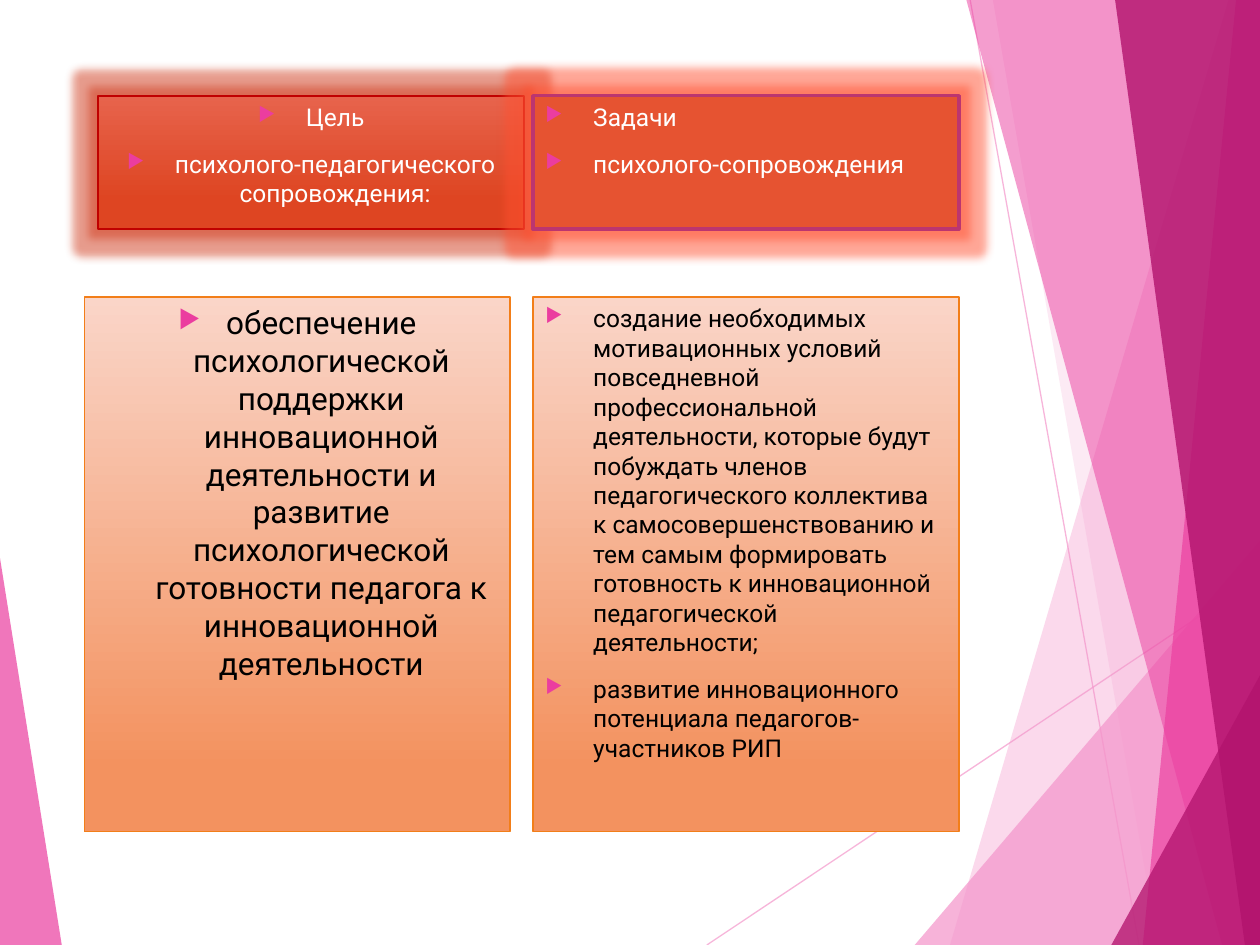
from dataclasses import dataclass

from lxml import etree
from pptx import Presentation
from pptx.dml.color import RGBColor
from pptx.enum.shapes import MSO_CONNECTOR, MSO_SHAPE
from pptx.enum.text import MSO_ANCHOR, PP_ALIGN
from pptx.oxml.ns import qn
from pptx.util import Inches, Pt

LINE = MSO_CONNECTOR.STRAIGHT
RECT = MSO_SHAPE.RECTANGLE
TOP = MSO_ANCHOR.TOP
LEFT, MID = PP_ALIGN.LEFT, PP_ALIGN.CENTER


@dataclass(frozen=True)
class Theme:
    font: str = "Roboto"
    small: int = 14
    large: int = 18
    pale: str = "F496CB"
    pink: str = "EB3D9F"
    plum: str = "B2136D"
    white: str = "FFFFFF"
    black: str = "000000"
    edge: str = "F27E19"
    peach: tuple = ((0, "FAD5C8"), (0.88, "F3925F"))
    red: tuple = ((0, "E7634C"), (0.78, "DE4522"))
    flat: str = "E65331"
    wine: str = "C00000"
    rose: str = "BC356F"
    halo: str = "D03A1C"
    glow: str = "FF5030"


def add(node, tag, **attrs):
    return etree.SubElement(node, qn(tag), attrs)


class Deck:
    cols, rows = 100, 75

    def __init__(self, theme):
        self.theme = theme
        self.prs = Presentation()
        self.prs.slide_width = Inches(10)
        self.prs.slide_height = Inches(7.5)
        self.slide = self.prs.slides.add_slide(self.prs.slide_layouts[6])
        self.shapes = self.slide.shapes

    def x(self, col):
        return round(self.prs.slide_width * col / self.cols)

    def y(self, row):
        return round(self.prs.slide_height * row / self.rows)

    def paint(self, fill, color, alpha=100):
        fill.solid()
        fill.fore_color.rgb = RGBColor.from_string(color)
        if alpha < 100:
            tint = fill._xPr.find(".//" + qn("a:srgbClr"))
            add(tint, "a:alpha", val=str(alpha * 1000))

    def fade(self, fill, stops):
        fill.gradient()
        fill.gradient_angle = 270
        for stop, (pos, color) in zip(fill.gradient_stops, stops):
            stop.position = pos
            stop.color.rgb = RGBColor.from_string(color)

    def line(self, start, end):
        wire = self.shapes.add_connector(
            LINE, self.x(start[0]), self.y(start[1]), self.x(end[0]), self.y(end[1]))
        wire.line.width = Pt(0.75)
        self.paint(wire.line.fill, self.theme.pale, 70)
        add(wire._element.spPr, "a:effectLst")

    def shard(self, color, alpha, *spots):
        first, *rest = [(self.x(col), self.y(row)) for col, row in spots]
        pen = self.shapes.build_freeform(*first)
        pen.add_line_segments(rest, close=True)
        shape = pen.convert_to_shape()
        shape.shadow.inherit = False
        self.paint(shape.fill, color, alpha)
        shape.line.fill.background()

    def box(self, area, fill, edge, width, glow=None):
        col, row, wide, high = area
        shape = self.shapes.add_shape(
            RECT, self.x(col), self.y(row), self.x(wide), self.y(high))
        shape.shadow.inherit = False
        if isinstance(fill, str):
            self.paint(shape.fill, fill)
        else:
            self.fade(shape.fill, fill)
        self.paint(shape.line.fill, edge)
        shape.line.width = Pt(width)
        if glow:
            halo = add(shape._element.spPr.find(qn("a:effectLst")),
                       "a:glow", rad=str(Inches(0.14)))
            tint = add(halo, "a:srgbClr", val=glow)
            add(tint, "a:alpha", val="50000")
        return shape

    def text(self, shape, items, size, color, align):
        frame = shape.text_frame
        frame.word_wrap = True
        frame.vertical_anchor = TOP
        for num, item in enumerate(items):
            para = frame.add_paragraph() if num else frame.paragraphs[0]
            para.alignment = align
            if num:
                para.space_before = Pt(10)
            self.bullet(para)
            run = para.add_run()
            run.text = item
            run.font.name = self.theme.font
            run.font.size = Pt(size)
            run.font.color.rgb = RGBColor.from_string(color)

    def bullet(self, para):
        props = para._p.get_or_add_pPr()
        props.set("marL", str(Inches(0.38)))
        props.set("indent", str(Inches(-0.38)))
        add(add(props, "a:buClr"), "a:srgbClr", val=self.theme.pink)
        add(props, "a:buSzPct", val="80000")
        add(props, "a:buChar", char="▶")

    def save(self):
        self.prs.save("out.pptx")


def main():
    look = Theme()
    deck = Deck(look)
    right, base = deck.cols, deck.rows

    deck.line((56.1, base), (right, 45.7))
    deck.line((77, 0), (90.4, base))
    for color, alpha, *spots in (
        (look.pale, 36, (97.5, 0), (75.4, base), (right, base), (right, 0)),
        (look.pale, 20, (78.8, 0), (91.9, base), (right, base), (right, 0)),
        (look.pale, 72, (72.6, base), (right, 42.9), (right, base)),
        (look.pink, 50, (76.7, 0), (97, base), (right, base), (right, 0)),
        (look.pink, 66, (98.1, 0), (90.7, base), (right, base), (right, 0)),
        (look.plum, 80, (88.5, 0), (98.8, base), (right, base), (right, 0)),
        (look.plum, 76, (88.2, base), (right, 53.6), (right, base)),
        (look.pink, 70, (0, 44.3), (4.9, base), (0, base)),
    ):
        deck.shard(color, alpha, *spots)

    wide, second = 33.8, 42.3
    head, body = (7.6, 10.6), (23.6, 42.4)

    goal = deck.box((6.7, body[0], wide, body[1]), look.peach, look.edge, 1)
    deck.text(goal, [
        "обеспечение психологической поддержки инновационной деятельности и "
        "развитие психологической готовности педагога к инновационной деятельности",
    ], look.large, look.black, MID)

    tasks = deck.box((second, body[0], wide, body[1]), look.peach, look.edge, 1)
    deck.text(tasks, [
        "создание необходимых мотивационных условий повседневной профессиональной "
        "деятельности, которые будут побуждать членов педагогического коллектива "
        "к самосовершенствованию и тем самым формировать готовность к "
        "инновационной педагогической деятельности;",
        "развитие инновационного потенциала педагогов-участников РИП",
    ], look.small, look.black, LEFT)

    title = deck.box((7.8, head[0], wide, head[1]), look.red, look.wine, 1, look.halo)
    deck.text(title, ["Цель", "психолого-педагогического сопровождения:"],
              look.small, look.white, MID)

    title = deck.box((second, head[0], wide, head[1]), look.flat, look.rose, 2, look.glow)
    deck.text(title, ["Задачи", "психолого-сопровождения"],
              look.small, look.white, LEFT)

    deck.save()


if __name__ == "__main__":
    main()
